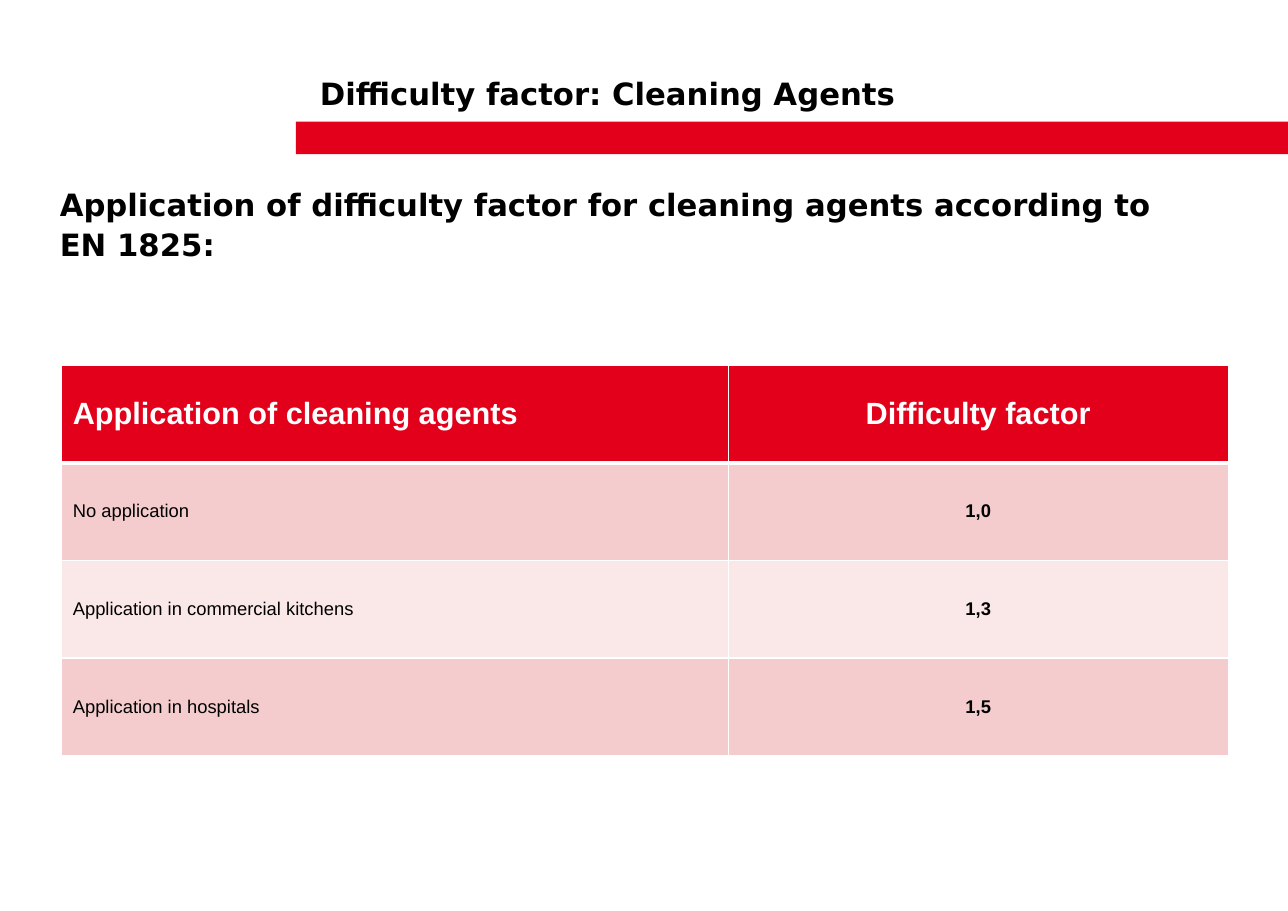
from dataclasses import dataclass

from lxml.etree import SubElement
from pptx import Presentation
from pptx.dml.color import RGBColor
from pptx.enum.shapes import MSO_SHAPE as SHAPE
from pptx.enum.text import MSO_ANCHOR as ANCHOR, PP_ALIGN as ALIGN
from pptx.oxml.ns import qn
from pptx.util import Pt

COLORS = {
    "red": "E2001A",
    "rose": "F4CCCD",
    "blush": "FAE7E8",
    "black": "000000",
    "white": "FFFFFF",
}
HEADING = {"name": "DejaVu Sans", "size": Pt(20), "bold": True}
HEADER_CELL = {"name": "Arial", "size": Pt(20), "bold": True}
LABEL_CELL = {"name": "Arial", "size": Pt(12), "bold": False}
FACTOR_CELL = {**LABEL_CELL, "bold": True}

COLUMN_WIDTHS = (434.75, 326.25)
ROW_HEIGHT = 63.75


@dataclass
class Heading:
    lines: list[str]
    left: float
    top: float
    width: float
    height: float
    anchor: ANCHOR
    inset_x: float = 0
    inset_y: float = 0


@dataclass
class Row:
    label: str
    factor: str
    fill: str
    text: str = "black"
    label_font: dict = None
    factor_font: dict = None
    top_line: float = 1
    bottom_line: float = 1


HEADINGS = [
    Heading(["Difficulty factor: Cleaning Agents"],
            201.6, 28.8, 638, 62, ANCHOR.MIDDLE, 7.2, 3.6),
    Heading(["Application of difficulty factor for cleaning agents according to",
             "EN 1825:"],
            39, 130.3, 785, 41, ANCHOR.BOTTOM),
]
ROWS = [
    Row("Application of cleaning agents", "Difficulty factor", "red", "white",
        HEADER_CELL, HEADER_CELL, bottom_line=3),
    Row("No application", "1,0", "rose", top_line=3),
    Row("Application in commercial kitchens", "1,3", "blush"),
    Row("Application in hospitals", "1,5", "rose"),
]


def rgb(name: str) -> RGBColor:
    return RGBColor.from_string(COLORS[name])


def write(p, text: str, font: dict, color: str) -> None:
    r = p.add_run()
    r.text = text
    for key, value in font.items():
        setattr(r.font, key, value)
    r.font.color.rgb = rgb(color)


def add_bar(s) -> None:
    bar = s.shapes.add_shape(SHAPE.RECTANGLE, Pt(193), Pt(79.3), Pt(647.2), Pt(21.3))
    bar.shadow.inherit = False
    bar.fill.solid()
    bar.fill.fore_color.rgb = rgb("red")
    bar.line.fill.background()


def add_heading(s, h: Heading) -> None:
    sp = s.shapes.add_textbox(Pt(h.left), Pt(h.top), Pt(h.width), Pt(h.height))
    tf = sp.text_frame
    tf.word_wrap = True
    tf.vertical_anchor = h.anchor
    tf.margin_left = tf.margin_right = Pt(h.inset_x)
    tf.margin_top = tf.margin_bottom = Pt(h.inset_y)
    for i, line in enumerate(h.lines):
        p = tf.add_paragraph() if i else tf.paragraphs[0]
        p.line_spacing = 1.1
        write(p, line, HEADING, "black")


def add_borders(cell, top: float, bottom: float) -> None:
    tc_pr = cell._tc.get_or_add_tcPr()
    for side, width in {"L": 1, "R": 1, "T": top, "B": bottom}.items():
        ln = SubElement(tc_pr, qn(f"a:ln{side}"), w=str(Pt(width)))
        fill = SubElement(ln, qn("a:solidFill"))
        SubElement(fill, qn("a:srgbClr"), val=COLORS["white"])


def add_factor_table(s) -> None:
    table = s.shapes.add_table(
        len(ROWS), len(COLUMN_WIDTHS), Pt(40.3), Pt(237.9),
        Pt(sum(COLUMN_WIDTHS)), Pt(ROW_HEIGHT * len(ROWS))).table
    for column, width in zip(table.columns, COLUMN_WIDTHS):
        column.width = Pt(width)
    for i, row in enumerate(ROWS):
        table.rows[i].height = Pt(ROW_HEIGHT)
        contents = [
            (row.label, row.label_font or LABEL_CELL, ALIGN.LEFT),
            (row.factor, row.factor_font or FACTOR_CELL, ALIGN.CENTER),
        ]
        for j, (text, font, align) in enumerate(contents):
            cell = table.cell(i, j)
            add_borders(cell, row.top_line, row.bottom_line)
            cell.fill.solid()
            cell.fill.fore_color.rgb = rgb(row.fill)
            cell.vertical_anchor = ANCHOR.MIDDLE
            p = cell.text_frame.paragraphs[0]
            p.alignment = align
            write(p, text, font, row.text)


def main() -> None:
    prs = Presentation()
    prs.slide_width, prs.slide_height = Pt(840.24), Pt(594)
    s = prs.slides.add_slide(prs.slide_layouts[6])
    add_bar(s)
    for heading in HEADINGS:
        add_heading(s, heading)
    add_factor_table(s)
    prs.save("out.pptx")


if __name__ == "__main__":
    main()
